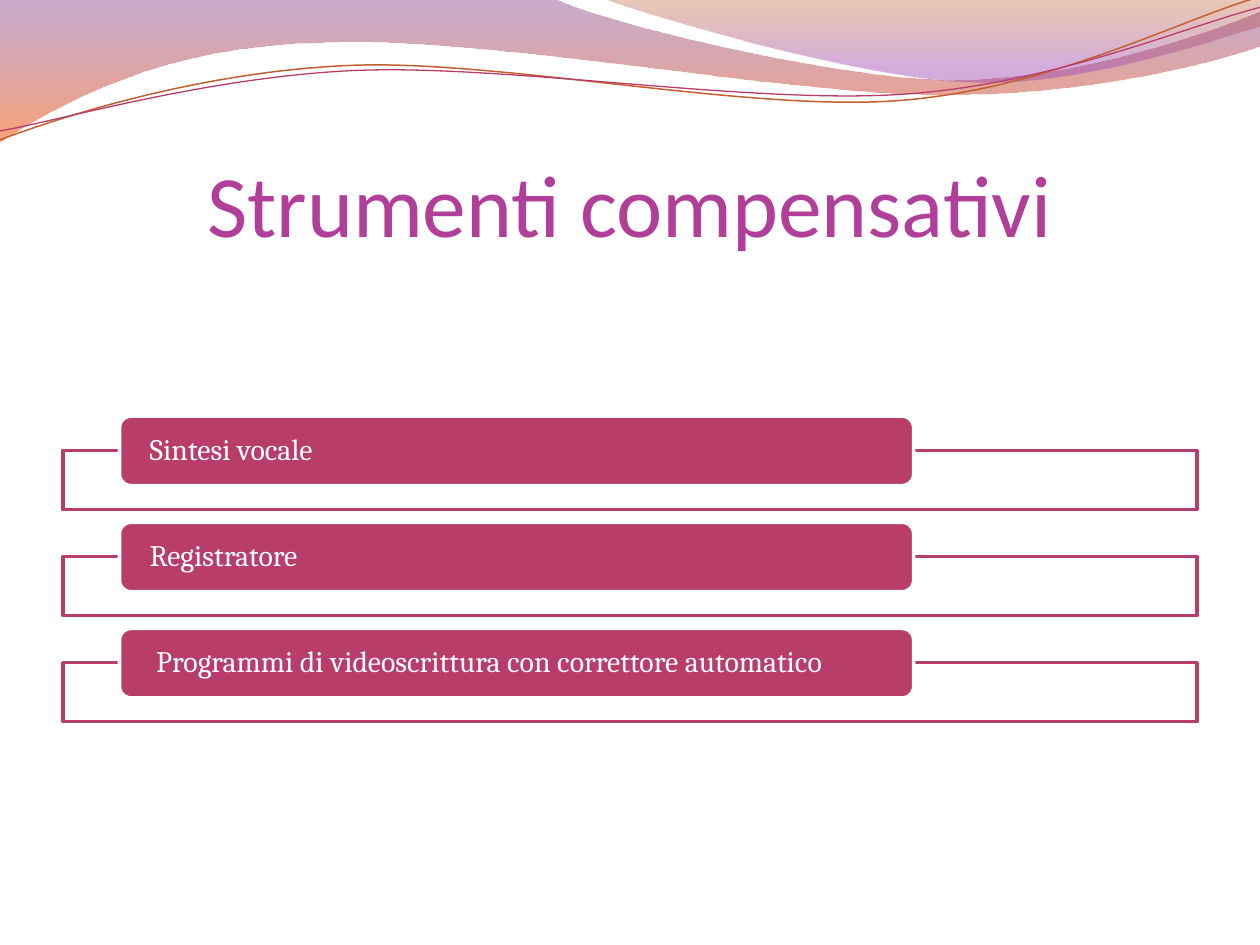
import pptx
import pptx.dml.color
import pptx.enum.shapes
import pptx.enum.text
import pptx.oxml
import pptx.util

Cm, Pt = pptx.util.Cm, pptx.util.Pt
ANCHOR = pptx.enum.text.MSO_ANCHOR
ALIGN = pptx.enum.text.PP_ALIGN
SHAPE = pptx.enum.shapes.MSO_SHAPE
DRAWING = 'xmlns:a="http://schemas.openxmlformats.org/drawingml/2006/main"'

COLORS = {
    "white": "FFFFFF",
    "berry": "B83D68",
    "title": "B13F9A",
    "violet": "834591",
    "orange": "F35307",
    "rust": "B74915",
    "lilac": "A14BB4",
    "copper": "C45F30",
}

# Outlines in cm: a pair is a straight step, six numbers are a Bezier curve
WIDE_WAVE = [
    (0, -0.03), (11.18, -0.03),
    (12.09, 0.43, 16.87, 1.6, 19.25, 1.6),
    (21.67, 1.6, 24.33, 0.66, 25.4, 0.23),
    (25.43, 0.91),
    (24.97, 1.12, 22.1, 1.93, 18.95, 1.91),
    (15.8, 1.91, 9.7, 0.71, 6.53, 0.86),
    (3.28, 0.89, 1.17, 2.11, -0.03, 2.87),
    (0, -0.03),
]
RIGHT_WAVE = [
    (12.17, -0.03),
    (12.93, 0.28, 17.32, 1.57, 19.53, 1.65),
    (21.74, 1.75, 24.41, 0.81, 25.4, 0.53),
    (25.4, 0),
    (12.17, -0.03),
]
COPPER_LINE = [
    (0, 2.82),
    (1.22, 2.36, 4.01, 1.45, 7.04, 1.32),
    (10.03, 1.19, 15.06, 2.26, 18.11, 2.03),
    (21.16, 1.8, 23.83, 0.38, 25.35, -0.05),
]
BERRY_LINE = [
    (0, 2.64),
    (1.19, 2.44, 4.17, 1.55, 7.19, 1.42),
    (10.24, 1.3, 15.16, 2.11, 18.21, 1.9),
    (21.23, 1.7, 23.9, 0.53, 25.4, 0.15),
]

TOOLS = [
    "Sintesi vocale",
    "Registratore",
    " Programmi di videoscrittura con correttore automatico",
]
FIRST_BAR_TOP, ROW_PITCH, FRAME_OFFSET = 8.39, 2.14, 0.69


def rgb(name):
    return pptx.dml.color.RGBColor.from_string(COLORS[name])


def set_values(target, values):
    for name, value in values.items():
        setattr(target, name, value)


def set_opacity(color_element, percent):
    color_element.append(
        pptx.oxml.parse_xml(f'<a:alpha {DRAWING} val="{percent * 1000}"/>'))


def set_line(shape, color, width):
    shape.line.color.rgb = rgb(color)
    shape.line.width = Pt(width)


def curve_element(step, left, top):
    """Make a Bezier step, relative to the corner of its shape."""
    points = "".join(
        f'<a:pt x="{Cm(x) - left}" y="{Cm(y) - top}"/>'
        for x, y in zip(step[::2], step[1::2]))
    return pptx.oxml.parse_xml(f"<a:cubicBezTo {DRAWING}>{points}</a:cubicBezTo>")


def add_outline(slide, outline, close):
    ends = [(Cm(step[-2]), Cm(step[-1])) for step in outline]
    builder = slide.shapes.build_freeform(*ends[0])
    builder.add_line_segments(ends[1:], close=close)
    shape = builder.convert_to_shape()
    shape.shadow.inherit = False
    # Bend the straight steps that have control points
    for straight, step in zip(shape.element.xpath(".//a:path/a:lnTo"), outline[1:]):
        if len(step) == 6:
            straight.getparent().replace(
                straight, curve_element(step, shape.left, shape.top))
    return shape


def add_wave(slide, outline, stops):
    """Add a filled wave; stops hold colour, position and opacity."""
    shape = add_outline(slide, outline, True)
    shape.line.fill.background()
    shape.fill.gradient()
    shape.fill.gradient_angle = 270
    for stop, (color, position, _) in zip(shape.fill.gradient_stops, stops):
        stop.color.rgb = rgb(color)
        stop.position = position
    for element, (_, _, opacity) in zip(shape.element.xpath(".//a:gs/a:srgbClr"), stops):
        set_opacity(element, opacity)


def add_curve(slide, outline, color, width):
    shape = add_outline(slide, outline, False)
    shape.fill.background()
    set_line(shape, color, width)


def add_box(slide, kind, bounds, fill, line):
    shape = slide.shapes.add_shape(kind, *[Cm(value) for value in bounds])
    shape.shadow.inherit = False
    shape.fill.solid()
    shape.fill.fore_color.rgb = rgb(fill)
    set_line(shape, line, 2)
    return shape


def write_text(shape, text, frame_format, paragraph_format, font_format, color):
    frame = shape.text_frame
    set_values(frame, {"word_wrap": True, **frame_format})
    paragraph = frame.paragraphs[0]
    set_values(paragraph, paragraph_format)
    run = paragraph.add_run()
    run.text = text
    set_values(run.font, font_format)
    run.font.color.rgb = rgb(color)


def add_title(slide, text):
    box = slide.shapes.add_textbox(Cm(1.27), Cm(1.96), Cm(22.86), Cm(3.18))
    write_text(
        box, text,
        {"vertical_anchor": ANCHOR.BOTTOM, "margin_left": 0, "margin_right": 0,
         "margin_top": Cm(0.13), "margin_bottom": 0},
        {"alignment": ALIGN.CENTER},
        {"name": "Calibri", "size": Pt(50)}, "title")


def add_tool(slide, text, top):
    frame = add_box(slide, SHAPE.RECTANGLE, (1.27, top + FRAME_OFFSET, 22.86, 1.19),
                    "white", "berry")
    set_opacity(frame.element.xpath("./p:spPr/a:solidFill/a:srgbClr")[0], 90)
    bar = add_box(slide, SHAPE.ROUNDED_RECTANGLE, (2.41, top, 16.01, 1.4), "berry", "white")
    write_text(
        bar, text,
        {"vertical_anchor": ANCHOR.MIDDLE, "margin_left": Cm(0.54), "margin_right": Cm(0.54),
         "margin_top": 0, "margin_bottom": 0},
        {"alignment": ALIGN.LEFT, "line_spacing": 0.9},
        {"name": "Cambria", "size": Pt(17)}, "white")


def main():
    presentation = pptx.Presentation()
    set_values(presentation, {"slide_width": Cm(25.4), "slide_height": Cm(19.05)})
    slide = presentation.slides.add_slide(presentation.slide_layouts[6])

    # Waves along the top edge
    add_wave(slide, WIDE_WAVE, [("violet", 0, 45), ("orange", 1, 55)])
    add_wave(slide, RIGHT_WAVE, [("rust", 0, 30), ("lilac", 0.8, 45)])
    add_curve(slide, COPPER_LINE, "copper", 0.85)
    add_curve(slide, BERRY_LINE, "berry", 0.75)

    # Title and list of tools
    add_title(slide, "Strumenti compensativi")
    for row, text in enumerate(TOOLS):
        add_tool(slide, text, FIRST_BAR_TOP + row * ROW_PITCH)

    presentation.save("out.pptx")


if __name__ == "__main__":
    main()
